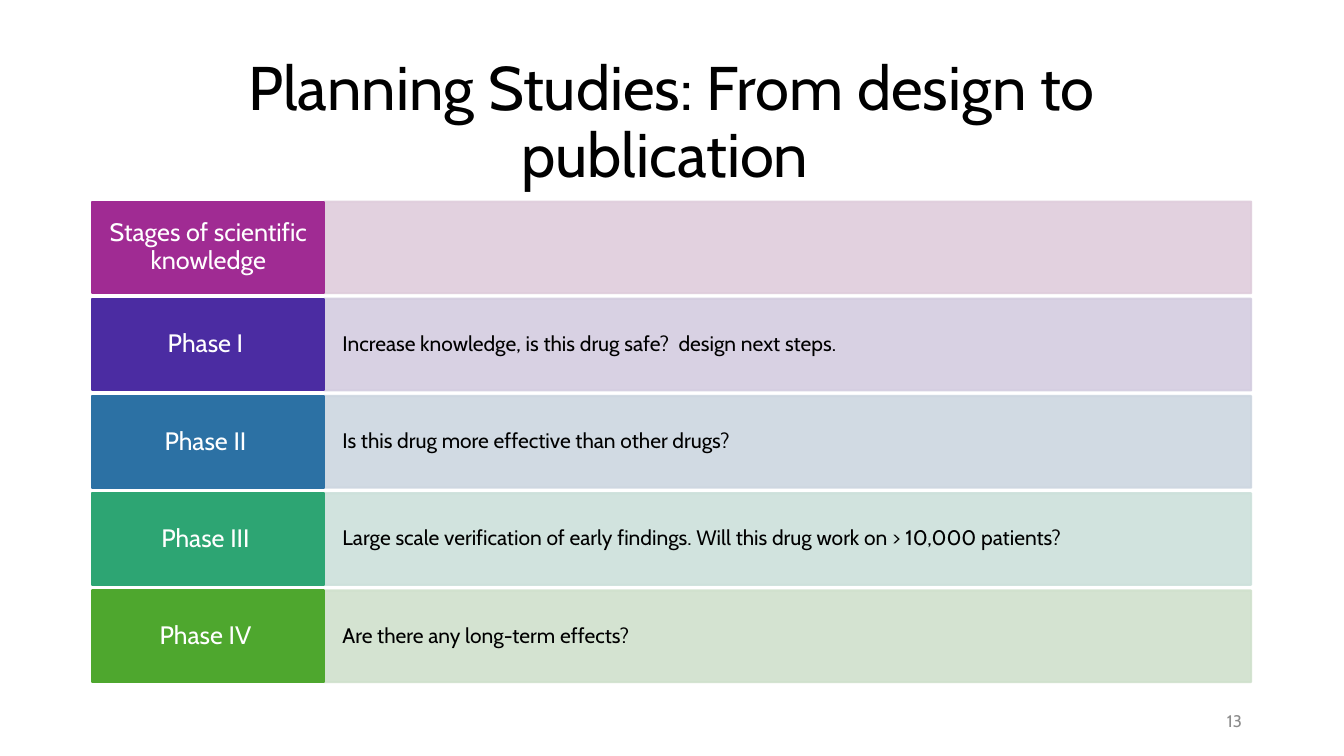
from dataclasses import dataclass

import pptx
import pptx.dml.color
import pptx.enum.shapes
import pptx.enum.text
import pptx.oxml
import pptx.oxml.ns
import pptx.util
from pptx.shapes.autoshape import Shape
from pptx.slide import Slide
from pptx.text.text import TextFrame

Cm = pptx.util.Cm
Pt = pptx.util.Pt
ALIGN = pptx.enum.text.PP_ALIGN

FONT = "Cabin"
LEFT = 2.33
TOP = 5.08
LABEL_WIDTH = 5.84
DETAIL_WIDTH = 23.36
ROW_HEIGHT = 2.31
ROW_PITCH = 2.45


@dataclass
class Stage:
    label: str
    detail: str
    color: str
    tint: str


STAGES = [
    Stage("Stages of scientific knowledge", "", "A02B93", "DFCDDC"),
    Stage("Phase I ", "Increase knowledge, is this drug safe?  design next steps.",
          "4B2CA2", "D4CDE0"),
    Stage("Phase II ", "Is this drug more effective than other drugs?",
          "2C71A4", "CDD6E0"),
    Stage("Phase III ",
          "Large scale verification of early findings. "
          "Will this drug work on > 10,000 patients?",
          "2DA573", "CDE1DB"),
    Stage("Phase IV ", "Are there any long-term effects?", "4EA72E", "D0E1CD"),
]


def rgb(value: str) -> pptx.dml.color.RGBColor:
    return pptx.dml.color.RGBColor.from_string(value)


def write(tf: TextFrame, text: str, *, size: float, color: str = "000000",
          align: ALIGN = ALIGN.LEFT, spacing: float = 0.9,
          inset: tuple[float, float] = (0.25, 0.13)) -> None:
    tf.word_wrap = True
    tf.auto_size = pptx.enum.text.MSO_AUTO_SIZE.NONE
    tf.vertical_anchor = pptx.enum.text.MSO_ANCHOR.MIDDLE
    tf.margin_left = tf.margin_right = Cm(inset[0])
    tf.margin_top = tf.margin_bottom = Cm(inset[1])
    p = tf.paragraphs[0]
    p.alignment = align
    p.line_spacing = spacing
    r = p.add_run()
    r.text = text
    r.font.name = FONT
    r.font.size = Pt(size)
    r.font.color.rgb = rgb(color)


def add_block(s: Slide, left: float, top: float, width: float, color: str,
              opacity: int = 100) -> Shape:
    sp = s.shapes.add_shape(pptx.enum.shapes.MSO_SHAPE.RECTANGLE,
                            Cm(left), Cm(top), Cm(width), Cm(ROW_HEIGHT))
    sp.shadow.inherit = False
    sp.fill.solid()
    sp.fill.fore_color.rgb = rgb(color)
    sp.line.color.rgb = rgb(color)
    sp.line.width = Pt(1.5)
    if opacity < 100:
        for clr in sp._element.spPr.iter(pptx.oxml.ns.qn("a:srgbClr")):
            alpha = pptx.oxml.parse_xml(
                f'<a:alpha {pptx.oxml.ns.nsdecls("a")} val="{opacity * 1000}"/>')
            clr.append(alpha)
    return sp


def add_stage(s: Slide, stage: Stage, top: float) -> None:
    detail = add_block(s, LEFT + LABEL_WIDTH, top, DETAIL_WIDTH, stage.tint, 90)
    if stage.detail:
        write(detail.text_frame, stage.detail, size=15, inset=(0.46, 0.58))
    label = add_block(s, LEFT, top, LABEL_WIDTH, stage.color)
    write(label.text_frame, stage.label, size=18, color="FFFFFF",
          align=ALIGN.CENTER, inset=(0.3, 0.23))


def main() -> None:
    prs = pptx.Presentation()
    prs.slide_width = Cm(33.87)
    prs.slide_height = Cm(19.05)
    s = prs.slides.add_slide(prs.slide_layouts[5])

    title = s.shapes.title
    title.left, title.top = Cm(LEFT), Cm(1.55)
    title.width, title.height = Cm(LABEL_WIDTH + DETAIL_WIDTH), Cm(3.15)
    write(title.text_frame, "Planning Studies: From design to publication ",
          size=44, align=ALIGN.CENTER)

    for i, stage in enumerate(STAGES):
        add_stage(s, stage, TOP + i * ROW_PITCH)

    number = s.shapes.add_textbox(Cm(23.93), Cm(17.65), Cm(7.62), Cm(1.01))
    write(number.text_frame, "13", size=12, color="8C8C8C",
          align=ALIGN.RIGHT, spacing=1.0)

    prs.save("out.pptx")


if __name__ == "__main__":
    main()
